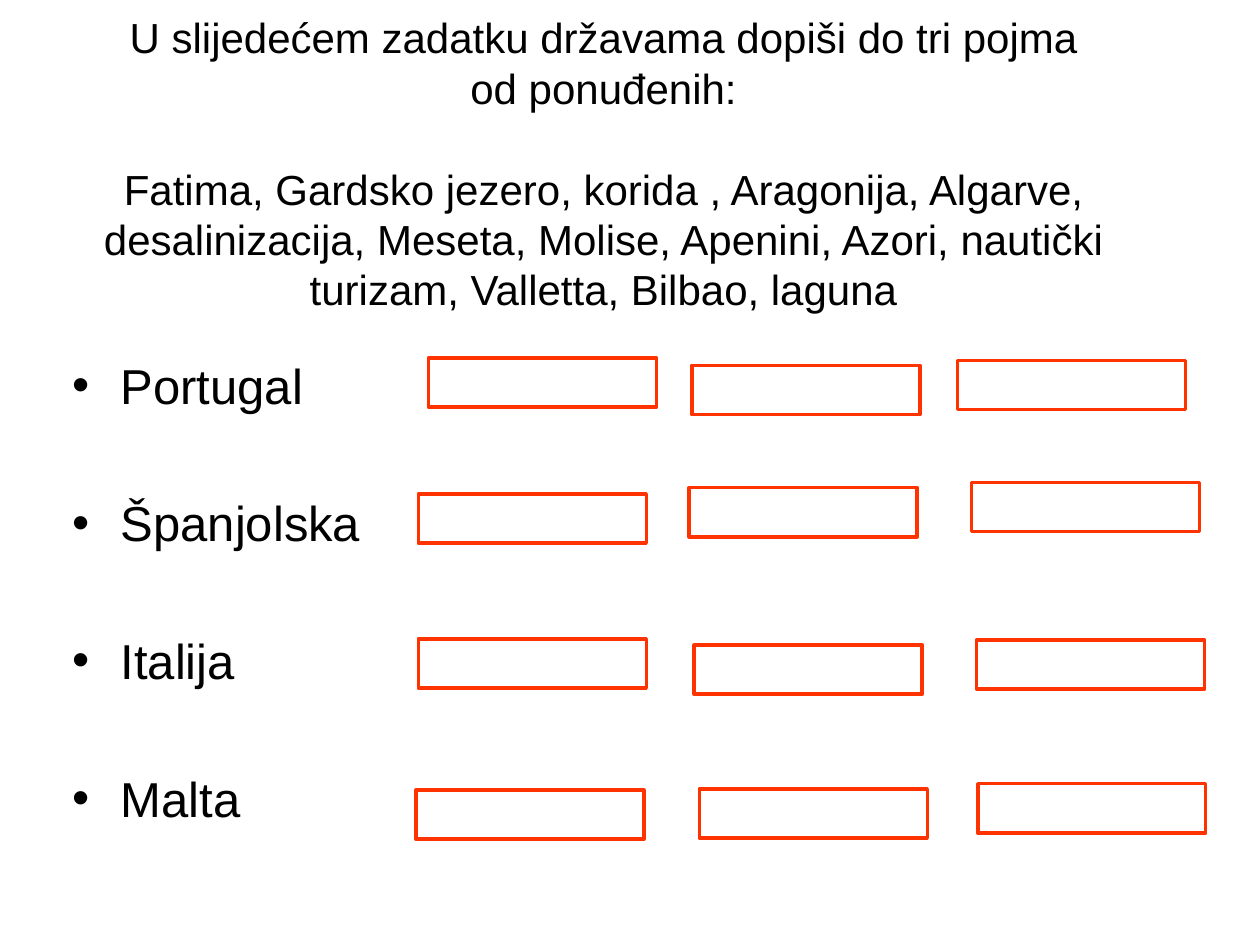
from lxml import etree
from pptx import Presentation
from pptx import util as u
from pptx.dml.color import RGBColor
from pptx.enum import shapes, text
from pptx.oxml import ns

INK = {"text": "000000", "line": "FF3300", "back": "FFFFFF"}
TASK = "U slijedećem zadatku državama dopiši do tri pojma\vod ponuđenih:"
TERMS = ("Fatima, Gardsko jezero, korida , Aragonija, Algarve, "
         "desalinizacija, Meseta, Molise, Apenini, Azori, "
         "nautički turizam, Valletta, Bilbao, laguna")
ROWS = {
    "Portugal": [(3.4, 2.84), (5.49, 2.9), (7.6, 2.86)],
    "Španjolska": [(3.32, 3.92), (5.47, 3.87), (7.71, 3.83)],
    "Italija": [(3.32, 5.07), (5.51, 5.12), (7.75, 5.08)],
    "Malta": [(3.3, 6.27), (5.55, 6.26), (7.76, 6.22)],
}


def color(name):
    return RGBColor.from_string(INK[name])


def put(item, **vals):
    for key, val in vals.items():
        setattr(item, key, val)


def place(shape, *box):
    for key, val in zip(("left", "top", "width", "height"), box):
        setattr(shape, key, u.Inches(val))


def write(frame, lines, size, align, gap, first=0):
    frame.text = "\n".join(lines)
    for i, para in enumerate(frame.paragraphs):
        put(para, alignment=align, space_before=u.Pt(gap if i else first))
        for run in para.runs:
            put(run.font, name="Arial", size=u.Pt(size))
            run.font.color.rgb = color("text")


def bullet(para):
    props = para._p.get_or_add_pPr()
    props.set("marL", str(u.Inches(0.38)))
    props.set("indent", str(u.Inches(-0.38)))
    etree.SubElement(props, ns.qn("a:buFont")).set("typeface", "Arial")
    etree.SubElement(props, ns.qn("a:buChar")).set("char", "•")


def add_title(slide):
    title = slide.shapes.title
    place(title, 0.48, 0.33, 8.62, 1.53)
    frame = title.text_frame
    put(frame, word_wrap=True, auto_size=text.MSO_AUTO_SIZE.NONE,
        vertical_anchor=text.MSO_ANCHOR.MIDDLE, margin_top=u.Inches(0.45))
    write(frame, [TASK, TERMS], 24, text.PP_ALIGN.CENTER, 28.8)


def add_list(slide):
    box = slide.shapes.add_textbox(*map(u.Inches, (0.48, 2.77, 2.85, 4.21)))
    frame = box.text_frame
    put(frame, word_wrap=True, auto_size=text.MSO_AUTO_SIZE.NONE)
    write(frame, ROWS, 28, text.PP_ALIGN.LEFT, 45, 5.6)
    for para in frame.paragraphs:
        bullet(para)


def add_blank(slide, left, top):
    box = slide.shapes.add_shape(
        shapes.MSO_SHAPE.RECTANGLE, *map(u.Inches, (left, top, 1.81, 0.39)))
    box.shadow.inherit = False
    box.fill.background()
    box.line.color.rgb = color("line")
    box.line.width = u.Pt(2)


def main():
    deck = Presentation()
    put(deck, slide_width=u.Inches(10), slide_height=u.Inches(7.5))
    slide = deck.slides.add_slide(deck.slide_layouts[5])
    slide.background.fill.solid()
    slide.background.fill.fore_color.rgb = color("back")
    add_title(slide)
    add_list(slide)
    for row in ROWS.values():
        for left, top in row:
            add_blank(slide, left, top)
    deck.save("out.pptx")


if __name__ == "__main__":
    main()
